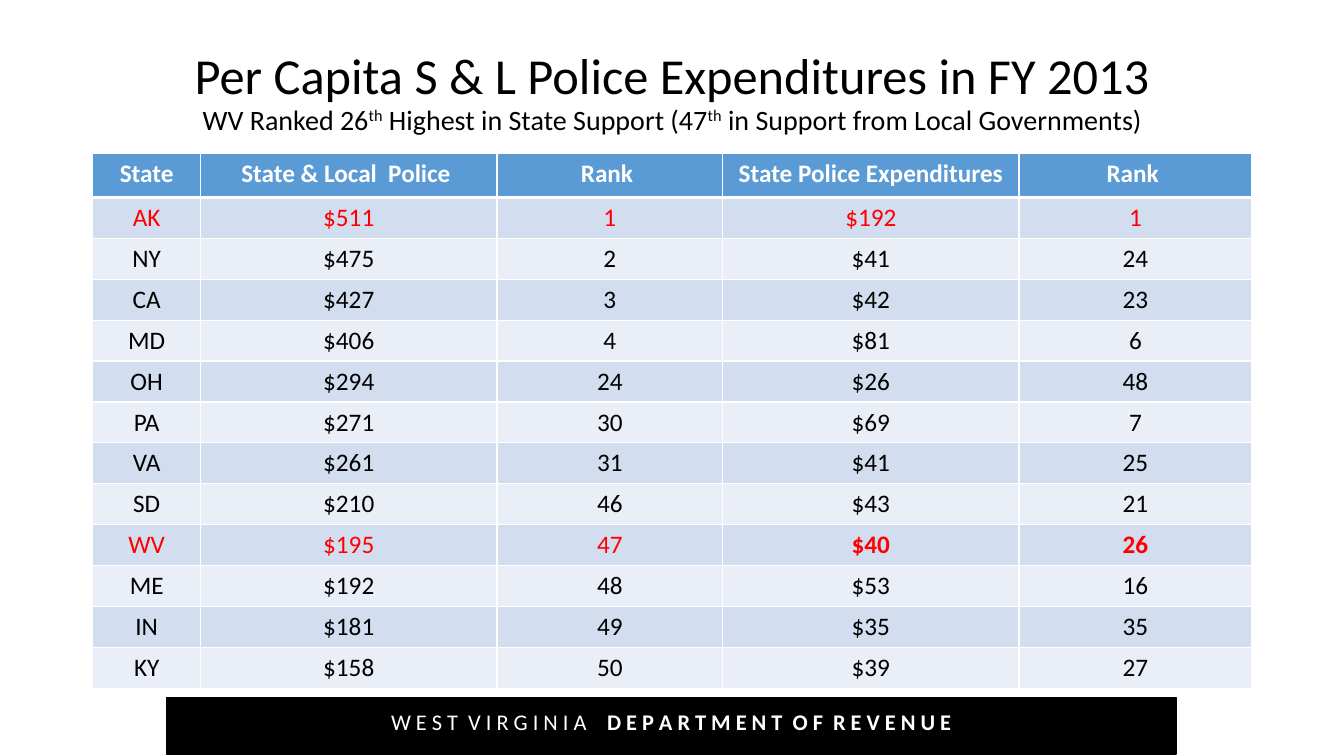
import dataclasses

import lxml.etree
import pptx
import pptx.dml.color
import pptx.enum.shapes
import pptx.enum.text
import pptx.oxml.ns
import pptx.util

qn = pptx.oxml.ns.qn


@dataclasses.dataclass(frozen=True)
class Theme:
    font: str = "Calibri"
    black: str = "000000"
    white: str = "FFFFFF"
    accent: str = "FF0000"
    header: str = "5B9BD5"
    bands: tuple = ("D2DEEF", "EAEFF7")
    title: int = 36
    subtitle: int = 20
    table: int = 18
    footer: int = 16
    thin: int = 1
    thick: int = 3


THEME = Theme()
HEADINGS = ("State", "State & Local  Police ", "Rank ",
            "State Police Expenditures", "Rank ")
STATES = (
    ("AK", 511, 1, 192, 1),
    ("NY", 475, 2, 41, 24),
    ("CA", 427, 3, 42, 23),
    ("MD", 406, 4, 81, 6),
    ("OH", 294, 24, 26, 48),
    ("PA", 271, 30, 69, 7),
    ("VA", 261, 31, 41, 25),
    ("SD", 210, 46, 43, 21),
    ("WV", 195, 47, 40, 26),
    ("ME", 192, 48, 53, 16),
    ("IN", 181, 49, 35, 35),
    ("KY", 158, 50, 39, 27),
)
HIGHLIGHTED = ("AK", "WV")
COLUMN_WIDTHS = (8.03, 22.05, 16.8, 22.05, 17.33)
HEADER_HEIGHT, ROW_HEIGHT = 5.87, 5.33


def rgb(color):
    return pptx.dml.color.RGBColor.from_string(color)


def add_text(para, text, *, size, color, bold=False, superscript=False):
    """Append a formatted span to a centred paragraph."""
    para.alignment = pptx.enum.text.PP_ALIGN.CENTER
    span = para.add_run()
    span.text = text
    span.font.name = THEME.font
    span.font.size = pptx.util.Pt(size)
    span.font.bold = bold
    span.font.color.rgb = rgb(color)
    if superscript:
        span.font._element.set("baseline", "30000")


def add_border(cell, side, width):
    """Draw one cell side, L, R, T or B; call before filling the cell."""
    line = lxml.etree.SubElement(cell._tc.get_or_add_tcPr(), qn("a:ln" + side),
                                 w=str(pptx.util.Pt(width)))
    fill = lxml.etree.SubElement(line, qn("a:solidFill"))
    lxml.etree.SubElement(fill, qn("a:srgbClr"), val=THEME.white)


class SlideBuilder:
    """Places elements on a grid of 100 columns by 100 rows."""

    def __init__(self, deck, theme):
        self.theme = theme
        self.page = deck.slides.add_slide(deck.slide_layouts[5])
        self.column = deck.slide_width / 100
        self.row = deck.slide_height / 100

    def across(self, columns):
        return round(columns * self.column)

    def down(self, rows):
        return round(rows * self.row)

    def area(self, left, top, width, height):
        return (self.across(left), self.down(top),
                self.across(width), self.down(height))

    def title(self, heading, subtitle_parts, area):
        box = self.page.shapes.title
        box.left, box.top, box.width, box.height = self.area(*area)
        frame = box.text_frame
        frame.auto_size = pptx.enum.text.MSO_AUTO_SIZE.NONE
        frame.vertical_anchor = pptx.enum.text.MSO_ANCHOR.MIDDLE
        para = frame.paragraphs[0]
        para.line_spacing = 0.9
        add_text(para, heading, size=self.theme.title, color=self.theme.black)
        para.add_line_break()
        lxml.etree.SubElement(para._p[-1], qn("a:rPr"),
                              sz=str(self.theme.title * 100))
        for text in subtitle_parts:
            add_text(para, text, size=self.theme.subtitle,
                     color=self.theme.black, superscript=text == "th")

    def cell(self, cell, text, fill, top, bottom, **text_format):
        cell.text_frame.word_wrap = True
        add_text(cell.text_frame.paragraphs[0], text,
                 size=self.theme.table, **text_format)
        for side, width in zip("LRTB", (self.theme.thin, self.theme.thin, top, bottom)):
            add_border(cell, side, width)
        cell.fill.solid()
        cell.fill.fore_color.rgb = rgb(fill)

    def table(self, left, top):
        theme = self.theme
        height = HEADER_HEIGHT + ROW_HEIGHT * len(STATES)
        table = self.page.shapes.add_table(
            len(STATES) + 1, len(HEADINGS),
            *self.area(left, top, sum(COLUMN_WIDTHS), height)).table
        for column, width in zip(table.columns, COLUMN_WIDTHS):
            column.width = self.across(width)
        for index, row in enumerate(table.rows):
            row.height = self.down(ROW_HEIGHT if index else HEADER_HEIGHT)
        for index, heading in enumerate(HEADINGS):
            self.cell(table.cell(0, index), heading, theme.header,
                      theme.thin, theme.thick, color=theme.white, bold=True)
        for number, (state, total, rank, spending, state_rank) in enumerate(STATES):
            values = (state, f"${total}", str(rank), f"${spending}", str(state_rank))
            color = theme.accent if state in HIGHLIGHTED else theme.black
            for index, value in enumerate(values):
                self.cell(table.cell(number + 1, index), value,
                          theme.bands[number % 2],
                          theme.thin if number else theme.thick, theme.thin,
                          color=color, bold=state == "WV" and index >= 3)

    def footer(self, region, department, bar_area, text_area):
        group = self.page.shapes.add_group_shape()
        bar = group.shapes.add_shape(
            pptx.enum.shapes.MSO_SHAPE.RECTANGLE, *self.area(*bar_area))
        bar.shadow.inherit = False
        bar.fill.solid()
        bar.fill.fore_color.rgb = rgb(self.theme.black)
        bar.line.color.rgb = rgb(self.theme.black)
        bar.line.width = pptx.util.Pt(self.theme.thin)
        box = group.shapes.add_textbox(*self.area(*text_area))
        box.text_frame.word_wrap = True
        para = box.text_frame.paragraphs[0]
        for text, bold in ((region, False), (department, True)):
            add_text(para, text, size=self.theme.footer,
                     color=self.theme.white, bold=bold)


def main():
    deck = pptx.Presentation()
    deck.slide_width = pptx.util.Inches(13.33)
    deck.slide_height = pptx.util.Inches(7.5)
    slide = SlideBuilder(deck, THEME)
    slide.title("Per Capita S & L Police Expenditures in FY 2013",
                ("WV Ranked 26", "th", " Highest in State Support (47", "th",
                 " in Support from Local Governments)"),
                (6.9, 5.33, 86.25, 14.13))
    slide.table(6.9, 20.27)
    slide.footer("W E S T  V I R G I N I A    ",
                 "D E P A R T M E N T  O F  R E V E N U E",
                 (12.4, 92.27, 75.1, 7.47), (12.45, 93.07, 75, 6.67))
    deck.save("out.pptx")


if __name__ == "__main__":
    main()
